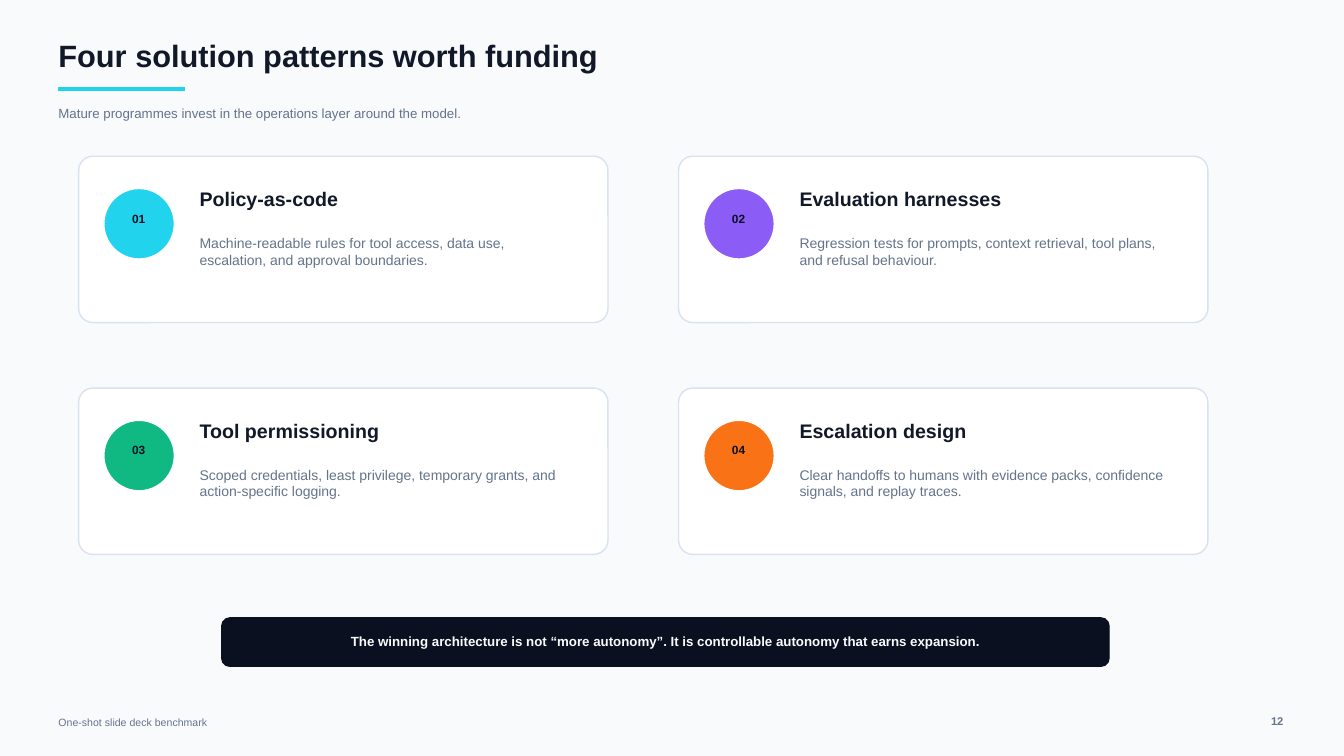
from lxml import etree
from pptx import Presentation
from pptx import util as u
from pptx.dml.color import RGBColor
from pptx.enum import shapes, text
from pptx.oxml.ns import qn

PX = 9144  # 100 px to the inch
INK, SLATE, NAVY, CYAN = "111827", "64748B", "0B1020", "22D3EE"
PAPER, WHITE, CARD_EDGE = "F8FAFC", "FFFFFF", "D8E2F0"
LEFT, CENTER, RIGHT = text.PP_ALIGN.LEFT, text.PP_ALIGN.CENTER, text.PP_ALIGN.RIGHT

PATTERNS = [
    (CYAN, "Policy-as-code",
     "Machine-readable rules for tool access, data use, escalation, and approval boundaries."),
    ("8B5CF6", "Evaluation harnesses",
     "Regression tests for prompts, context retrieval, tool plans, and refusal behaviour."),
    ("10B981", "Tool permissioning",
     "Scoped credentials, least privilege, temporary grants, and action-specific logging."),
    ("F97316", "Escalation design",
     "Clear handoffs to humans with evidence packs, confidence signals, and replay traces."),
]


def px(*lengths):
    return [u.Emu(length * PX) for length in lengths]


def color(hex_code):
    return RGBColor.from_string(hex_code)


def write(holder, words, size, ink=SLATE, bold=False, align=LEFT):
    """Fill a text holder with one formatted, vertically centred paragraph."""
    frame = holder.text_frame
    frame.word_wrap = True
    frame.auto_size = text.MSO_AUTO_SIZE.NONE
    frame.vertical_anchor = text.MSO_ANCHOR.MIDDLE
    frame.margin_left = frame.margin_top = frame.margin_right = frame.margin_bottom = 0
    paragraph = frame.paragraphs[0]
    paragraph.alignment = align
    run = paragraph.add_run()
    run.text = words
    run.font.name, run.font.size, run.font.bold = "Arial", u.Pt(size), bold
    run.font.color.rgb = color(ink)


def add_label(slide, box, words, size, **style):
    write(slide.shapes.add_textbox(*px(*box)), words, size, **style)


def add_panel(slide, kind, box, fill, edge, corner=None):
    panel = slide.shapes.add_shape(kind, *px(*box))
    panel.shadow.inherit = False
    panel.fill.solid()
    panel.fill.fore_color.rgb = color(fill)
    panel.line.color.rgb = color(edge)
    panel.line.width = u.Pt(1)
    if corner is not None:
        panel.adjustments[0] = corner


def add_title(slide, words):
    title = slide.shapes.title
    title.left, title.top, title.width, title.height = px(58, 35, 880, 40)
    write(title, words, 22, ink=INK, bold=True)
    rule = slide.shapes.add_connector(shapes.MSO_CONNECTOR.STRAIGHT, *px(58, 88, 183, 88))
    rule.line.color.rgb = color(CYAN)
    rule.line.width = u.Pt(3)
    etree.SubElement(rule._element.spPr, qn("a:effectLst"))


def add_card(slide, index, accent, heading, detail):
    row, column = divmod(index, 2)
    left, top = 78 + 595 * column, 155 + 230 * row
    add_panel(slide, shapes.MSO_SHAPE.ROUNDED_RECTANGLE, (left, top, 525, 165),
              WHITE, CARD_EDGE, 0.085)
    add_panel(slide, shapes.MSO_SHAPE.OVAL, (left + 25, top + 32, 70, 70), accent, WHITE)
    add_label(slide, (left + 42, top + 54, 35, 15), f"{index + 1:02}", 8.5,
              ink=NAVY, bold=True, align=CENTER)
    add_label(slide, (left + 120, top + 28, 360, 28), heading, 14, ink=INK, bold=True)
    add_label(slide, (left + 120, top + 70, 365, 48), detail, 10)


def main():
    deck = Presentation()
    deck.slide_width, deck.slide_height = px(1333, 750)
    slide = deck.slides.add_slide(deck.slide_layouts[5])
    slide.background.fill.solid()
    slide.background.fill.fore_color.rgb = color(PAPER)

    add_title(slide, "Four solution patterns worth funding")
    add_label(slide, (58, 98, 850, 28),
              "Mature programmes invest in the operations layer around the model.", 9.5)
    for index, pattern in enumerate(PATTERNS):
        add_card(slide, index, *pattern)

    add_panel(slide, shapes.MSO_SHAPE.ROUNDED_RECTANGLE, (220, 613, 880, 48), NAVY, NAVY, 0.167)
    add_label(slide, (245, 629, 830, 15),
              "The winning architecture is not “more autonomy”. "
              "It is controllable autonomy that earns expansion.",
              9.5, ink=PAPER, bold=True, align=CENTER)
    add_label(slide, (58, 708, 310, 18), "One-shot slide deck benchmark", 7.5)
    add_label(slide, (1208, 705, 65, 20), "12", 8, bold=True, align=RIGHT)
    deck.save("out.pptx")


if __name__ == "__main__":
    main()
